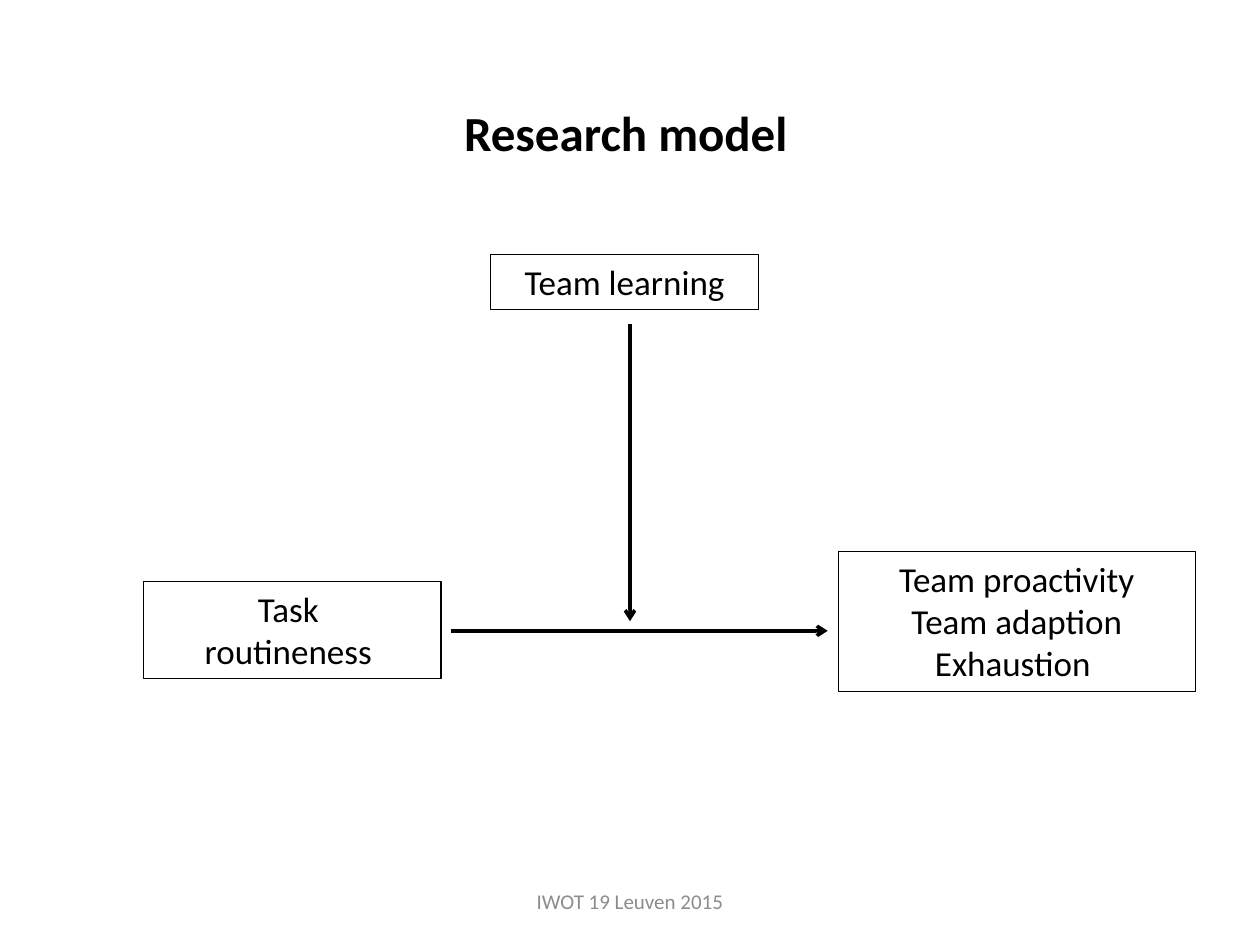
from lxml.etree import SubElement
from pptx import Presentation
from pptx.dml.color import RGBColor
from pptx.enum.shapes import MSO_CONNECTOR as Connector
from pptx.enum.text import MSO_ANCHOR as Anchor, MSO_AUTO_SIZE as AutoSize, PP_ALIGN as Align
from pptx.oxml.ns import qn
from pptx.util import Pt

COLORS = {"ink": "000000", "footer": "8C8C8C"}
FONT = "Calibri"


def color(name):
    return RGBColor.from_string(COLORS[name])


def write_lines(frame, lines, size, ink="ink", bold=False):
    frame.word_wrap = True
    frame.text = "\n".join(lines)
    for paragraph in frame.paragraphs:
        paragraph.alignment = Align.CENTER
        paragraph.font.name = FONT
        paragraph.font.size = Pt(size)
        paragraph.font.bold = bold
        paragraph.font.color.rgb = color(ink)


def add_heading(slide, text):
    heading = slide.shapes.title
    heading.left, heading.top = Pt(20), Pt(29.5)
    heading.width, heading.height = Pt(675), Pt(116)
    frame = heading.text_frame
    write_lines(frame, [text], 28, bold=True)
    frame.auto_size = AutoSize.NONE
    frame.vertical_anchor = Anchor.MIDDLE
    frame.margin_bottom = Pt(28)


def add_variable(slide, lines, left, top, width, height):
    variable = slide.shapes.add_textbox(Pt(left), Pt(top), Pt(width), Pt(height))
    variable.line.color.rgb = color("ink")
    variable.line.width = Pt(0.75)
    write_lines(variable.text_frame, lines, 20)
    variable.text_frame.auto_size = AutoSize.SHAPE_TO_FIT_TEXT


def add_effect(slide, start, end):
    effect = slide.shapes.add_connector(Connector.STRAIGHT, *map(Pt, start + end))
    effect.line.color.rgb = color("ink")
    effect.line.width = Pt(2)
    SubElement(effect.line._get_or_add_ln(), qn("a:tailEnd"), type="arrow")
    SubElement(effect._element.spPr, qn("a:effectLst"))


def add_footer(slide, text):
    footer = slide.shapes.add_textbox(Pt(246), Pt(500.5), Pt(228), Pt(28.75))
    write_lines(footer.text_frame, [text], 12, ink="footer")
    footer.text_frame.vertical_anchor = Anchor.MIDDLE


def main():
    deck = Presentation()
    deck.slide_width, deck.slide_height = Pt(720), Pt(540)
    slide = deck.slides.add_slide(deck.slide_layouts[5])
    add_heading(slide, "Research model")
    add_variable(slide, ["Team learning"], 280.5, 145.25, 153, 31.5)
    add_variable(slide, ["Team proactivity", "Team adaption Exhaustion "], 479, 315, 204, 80)
    add_effect(slide, (360, 185), (360, 355))
    add_variable(slide, ["Task ", "routineness "], 82, 332.25, 170, 55.5)
    add_effect(slide, (258, 360.5), (473, 360.5))
    add_footer(slide, "IWOT 19 Leuven 2015")
    deck.save("out.pptx")


if __name__ == "__main__":
    main()
